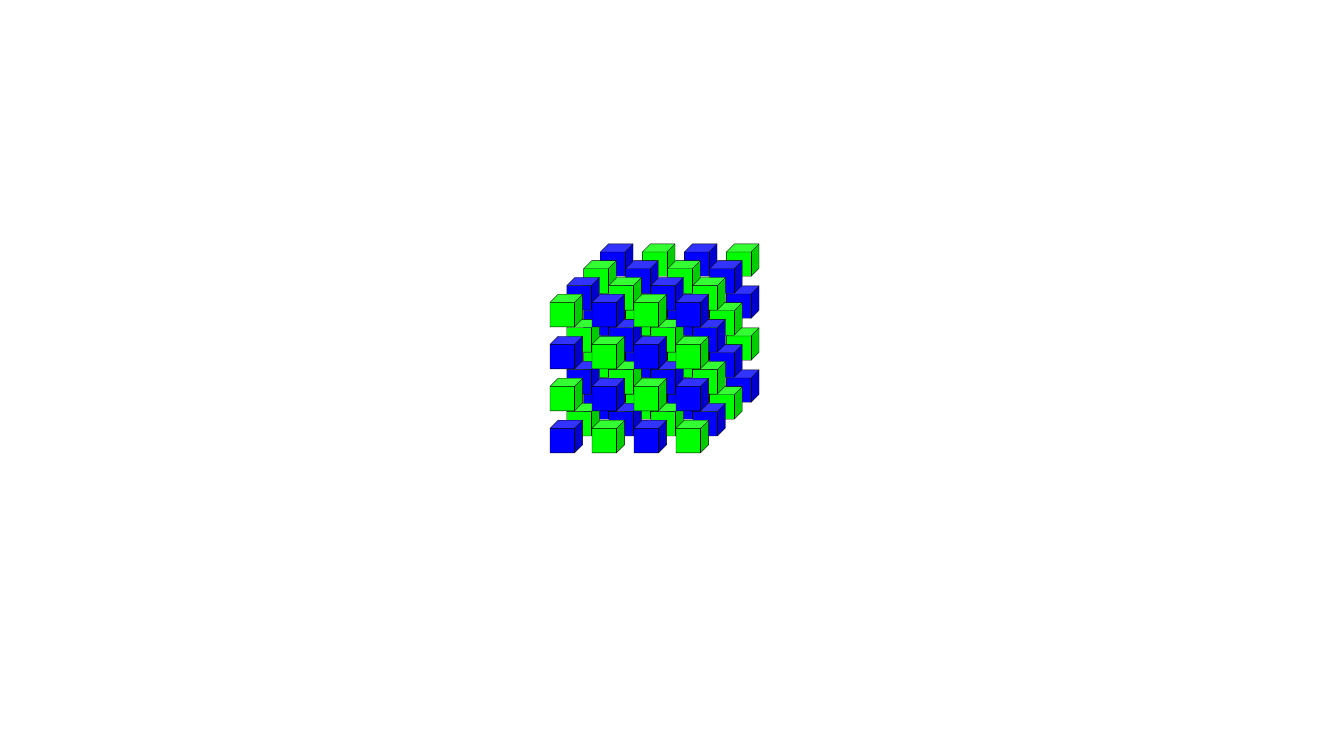
from itertools import product

from pptx import Presentation
from pptx.dml.color import RGBColor
from pptx.enum import shapes
from pptx.util import Pt

BLUE = RGBColor(0x00, 0x00, 0xFF)
GREEN = RGBColor(0x00, 0xFF, 0x00)
BLACK = RGBColor(0x00, 0x00, 0x00)
COLORS = (BLUE, GREEN)

COLUMNS = 4
ROW_PAIRS = (2, 0)
DEPTH_PAIRS = (0, 2)

BACK_LEFT, BACK_TOP = 428.9, 174.2
CUBE = 23.3
GAP = 30
DEPTH_SHIFT = 12


def add_cube(s, col, row, depth):
    left = BACK_LEFT + col * GAP - depth * DEPTH_SHIFT
    top = BACK_TOP + row * GAP + depth * DEPTH_SHIFT
    sp = s.shapes.add_shape(shapes.MSO_SHAPE.CUBE, Pt(left), Pt(top), Pt(CUBE), Pt(CUBE))
    sp.shadow.inherit = False
    sp.fill.solid()
    sp.fill.fore_color.rgb = COLORS[(col + row + depth) % 2]
    sp.line.color.rgb = BLACK
    sp.line.width = Pt(0.25)


def main():
    prs = Presentation()
    prs.slide_width, prs.slide_height = Pt(960), Pt(540)
    s = prs.slides.add_slide(prs.slide_layouts[6])
    for row, depth, col, nearer, lower in product(
        ROW_PAIRS, DEPTH_PAIRS, range(COLUMNS), (0, 1), (1, 0)
    ):
        add_cube(s, col, row + lower, depth + nearer)
    prs.save("out.pptx")


if __name__ == "__main__":
    main()
